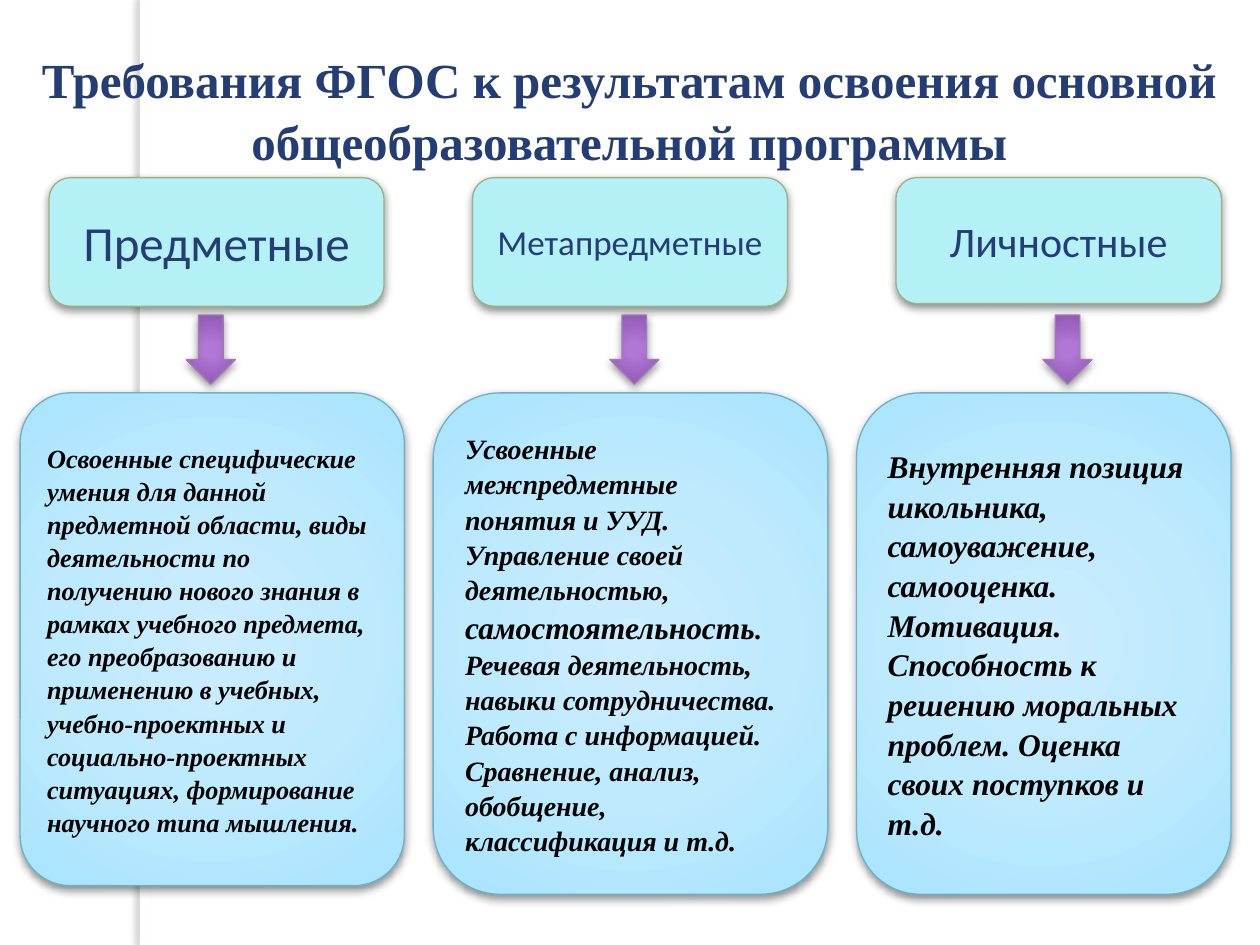
from lxml.etree import SubElement
from pptx import Presentation
from pptx.dml.color import RGBColor
from pptx.enum.shapes import MSO_SHAPE
from pptx.enum.text import MSO_ANCHOR, MSO_AUTO_SIZE, PP_ALIGN
from pptx.oxml.ns import qn
from pptx.util import Pt

SERIF, SANS = "Times New Roman", "Calibri"
NAVY, BLACK, WHITE = "253D75", "000000", "FFFFFF"
SKY = [(0, "CBEDFD"), (50, "BEEAFD"), (97, "A9E4FF"), (100, "A3E3FF")]
PLUM = [(0, "B277D5"), (15, "B177D4"), (62, "9D63C0"), (97, "8C55AC"),
        (100, "8A50AB")]


def color(code):
    return RGBColor.from_string(code)


def node(root, tag, **attrs):
    return SubElement(root, qn(tag), {k: str(v) for k, v in attrs.items()})


class Deck:
    def __init__(self, wide, high):
        self.file = Presentation()
        self.file.slide_width, self.file.slide_height = Pt(wide), Pt(high)
        self.slide = self.file.slides.add_slide(self.file.slide_layouts[5])

    def style(self, para, size, face, tint, bold=False, slant=False):
        font = para.font
        font.size, font.name = Pt(size), face
        font.bold, font.italic = bold, slant
        font.color.rgb = color(tint)

    def title(self, text, box):
        shape = self.slide.shapes.title
        shape.left, shape.top, shape.width, shape.height = map(Pt, box)
        frame = shape.text_frame
        frame.text = text
        frame.word_wrap = True
        frame.auto_size = MSO_AUTO_SIZE.NONE
        frame.vertical_anchor = MSO_ANCHOR.TOP
        frame.margin_left = frame.margin_right = Pt(4)
        para = frame.paragraphs[0]
        para.alignment, para.line_spacing = PP_ALIGN.CENTER, 1.06
        self.style(para, 28, SERIF, NAVY, bold=True)

    def shade(self, shape, tint, alpha, blur, dist, angle):
        props = shape.fill._xPr
        shape.shadow.inherit = False
        glow = node(props.find(qn("a:effectLst")), "a:outerShdw",
                    blurRad=Pt(blur), dist=Pt(dist), dir=angle * 60000,
                    algn="ctr", rotWithShape=0)
        node(node(glow, "a:srgbClr", val=tint), "a:alpha", val=alpha * 1000)

    def glow(self, shape, stops):
        """Fill from the centre outwards."""
        fill = shape.fill
        fill.gradient()
        grad = fill._xPr.find(qn("a:gradFill"))
        for part in list(grad):
            grad.remove(part)
        row = node(grad, "a:gsLst")
        for pos, tint in stops:
            node(node(row, "a:gs", pos=pos * 1000), "a:srgbClr", val=tint)
        way = node(grad, "a:path", path="circle")
        node(way, "a:fillToRect", l=50000, t=50000, r=50000, b=50000)

    def shape(self, kind, box, fill, line=None):
        shape = self.slide.shapes.add_shape(kind, *map(Pt, box))
        if isinstance(fill, list):
            self.glow(shape, fill)
        else:
            shape.fill.solid()
            shape.fill.fore_color.rgb = color(fill)
        if line:
            shape.line.color.rgb = color(line)
            shape.line.width = Pt(0.75)
            self.shade(shape, BLACK, 43, 5, 2, 90)
        else:
            shape.line.fill.background()
        return shape

    def strip(self, box):
        shape = self.shape(MSO_SHAPE.RECTANGLE, box, WHITE)
        self.shade(shape, "646068", 25, 3, 3, 180)
        self.slide.shapes.title._element.addprevious(shape._element)

    def head(self, box, text, size):
        shape = self.shape(MSO_SHAPE.ROUNDED_RECTANGLE, box, "B3F1F7", "9CB084")
        para = shape.text_frame.paragraphs[0]
        para.text, para.alignment = text, PP_ALIGN.CENTER
        self.style(para, size, SANS, NAVY)

    def arrow(self, box):
        self.shape(MSO_SHAPE.DOWN_ARROW, box, PLUM, "A379BB")

    def card(self, box, lines, size, curve):
        """Each line is a list of (text, size) runs or a plain string."""
        shape = self.shape(MSO_SHAPE.ROUNDED_RECTANGLE, box, SKY, "6BB1C9")
        shape.adjustments[0] = curve
        frame = shape.text_frame
        frame.vertical_anchor = MSO_ANCHOR.MIDDLE
        for i, line in enumerate(lines):
            para = frame.add_paragraph() if i else frame.paragraphs[0]
            para.alignment, para.line_spacing = PP_ALIGN.LEFT, 1.05
            self.style(para, size, SERIF, BLACK, bold=True, slant=True)
            for text, big in [(line, size)] if isinstance(line, str) else line:
                run = para.add_run()
                run.text = text
                if big != size:
                    run.font.size = Pt(big)


# Columns: head (left, width, height, text, size), arrow left,
# card (left, width, height, lines, size, curve)
COLS = [
    ((28, 191.5, 73.5, "Предметные", 28), 106.5,
     (11.5, 219.5, 281.5, [
         "Освоенные специфические умения для данной предметной области, "
         "виды деятельности по получению нового знания в рамках учебного "
         "предмета, его преобразованию и применению в учебных, "
         "учебно-проектных и социально-проектных ситуациях, формирование "
         "научного типа мышления."], 15, 0.13)),
    ((270, 180, 73.5, "Метапредметные", 20), 348.5,
     (247.5, 225.5, 286.5, [
         "Усвоенные межпредметные понятия и УУД.",
         [("Управление своей деятельностью, ", 16),
          ("самостоятельность", 18), (".", 16)],
         "Речевая деятельность, навыки сотрудничества.",
         "Работа с информацией. Сравнение, анализ, обобщение, "
         "классификация и т.д."], 16, 0.17)),
    ((512, 186, 72, "Личностные", 24), 596,
     (489.5, 214, 286.5, [
         "Внутренняя позиция школьника, самоуважение, самооценка. "
         "Мотивация. Способность к решению моральных проблем. Оценка "
         "своих поступков и т.д."], 18, 0.17)),
]


def main():
    deck = Deck(720, 540)

    # Background strip and title
    deck.strip((80, 0, 6, 540))
    deck.title("Требования ФГОС к результатам освоения основной "
               "общеобразовательной программы", (16.5, 22.5, 686, 76))

    # Three columns: head, arrow, card
    for head, left, card in COLS:
        x, wide, high, text, size = head
        deck.head((x, 101.5, wide, high), text, size)
        deck.arrow((left, 180, 28, 39.5))
        x, wide, high, lines, size, curve = card
        deck.card((x, 224.5, wide, high), lines, size, curve)

    deck.file.save("out.pptx")


if __name__ == "__main__":
    main()
